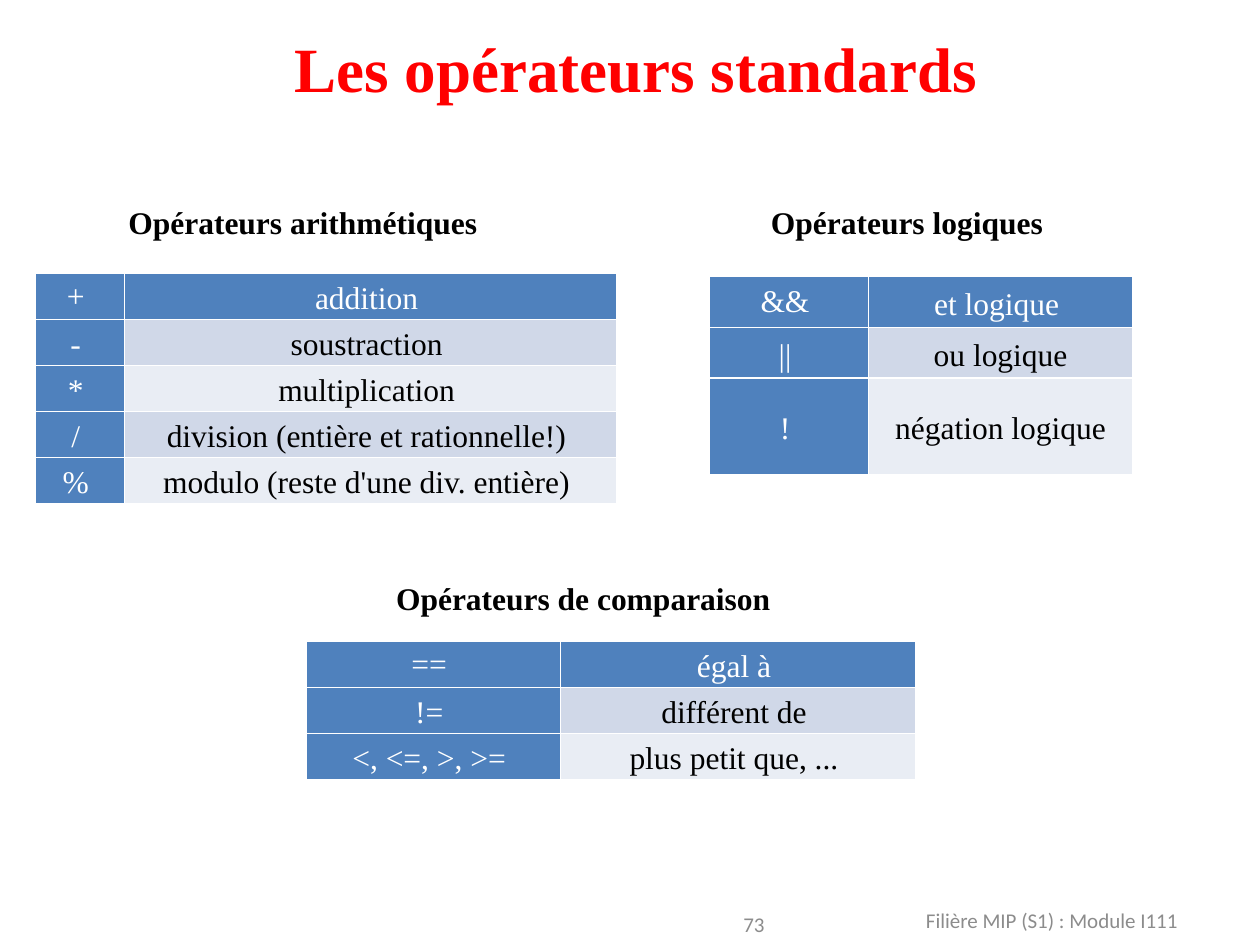
from pptx import Presentation
from pptx.dml.color import RGBColor
from pptx.enum.text import MSO_ANCHOR as Anchor, MSO_AUTO_SIZE as AutoSize, PP_ALIGN as Align
from pptx.util import Pt

RED = RGBColor(0xFF, 0x00, 0x00)
BLACK = RGBColor(0x00, 0x00, 0x00)
WHITE = RGBColor(0xFF, 0xFF, 0xFF)
GREY = RGBColor(0x8C, 0x8C, 0x8C)
BLUE = RGBColor(0x4F, 0x81, 0xBD)
BANDS = (RGBColor(0xE9, 0xED, 0xF4), RGBColor(0xD0, 0xD8, 0xE8))

ARITHMETIC = [
    ("+ ", "addition "),
    ("- ", "soustraction "),
    ("* ", "multiplication "),
    ("/ ", "division (entière et rationnelle!) "),
    ("% ", "modulo (reste d'une div. entière) "),
]
LOGIC = [
    ("&& ", "et logique "),
    ("|| ", "ou logique"),
    ("! ", "négation logique"),
]
COMPARISON = [
    ("== ", "égal à "),
    ("!= ", "différent de "),
    ("<, <=, >, >= ", "plus petit que, ... "),
]


class OperatorSlide:
    serif = "Times New Roman"
    sans = "Calibri"
    cell_margin = 0.72
    line_spacing = 1.15

    def __init__(self, presentation):
        self.slide = presentation.slides.add_slide(presentation.slide_layouts[5])

    def format(self, paragraph, size, color, font, bold=False, align=Align.LEFT):
        paragraph.alignment = align
        for run in paragraph.runs:
            run.font.name = font
            run.font.size = Pt(size)
            run.font.bold = bold
            run.font.color.rgb = color

    def title(self, text, left, top, width, height):
        title = self.slide.shapes.title
        title.left, title.top, title.width, title.height = map(Pt, (left, top, width, height))
        frame = title.text_frame
        frame.text = text
        frame.word_wrap = False
        frame.auto_size = AutoSize.NONE
        frame.vertical_anchor = Anchor.TOP
        self.format(frame.paragraphs[0], 36, RED, self.serif, bold=True)

    def label(self, text, left, top, width, anchor, wrap, **style):
        box = self.slide.shapes.add_textbox(Pt(left), Pt(top), Pt(width), Pt(29))
        frame = box.text_frame
        frame.text = text
        frame.word_wrap = wrap
        frame.vertical_anchor = anchor
        self.format(frame.paragraphs[0], **style)

    def heading(self, text, left, top, width):
        self.label(text, left, top, width, Anchor.TOP, False,
                   size=18, color=BLACK, font=self.serif, bold=True)

    def footer(self, text, left, top, width, align=Align.LEFT):
        self.label(text, left, top, width, Anchor.MIDDLE, True,
                   size=12, color=GREY, font=self.sans, align=align)

    def table(self, rows, left, top, widths, heights):
        """Symbols in the first column and the whole first row get the header colours."""
        table = self.slide.shapes.add_table(
            len(rows), len(widths), Pt(left), Pt(top), Pt(sum(widths)), Pt(sum(heights))).table
        table.first_col = True
        for column, width in zip(table.columns, widths):
            column.width = Pt(width)
        for r, (texts, height) in enumerate(zip(rows, heights)):
            table.rows[r].height = Pt(height)
            for c, text in enumerate(texts):
                is_header = r == 0 or c == 0
                self.cell(table.cell(r, c), text,
                          BLUE if is_header else BANDS[r % 2],
                          WHITE if is_header else BLACK,
                          1.0 if r == c == 0 else self.line_spacing)

    def cell(self, cell, text, fill, color, spacing):
        cell.text_frame.text = text
        cell.vertical_anchor = Anchor.MIDDLE
        cell.margin_left = cell.margin_right = Pt(self.cell_margin)
        cell.margin_top = cell.margin_bottom = Pt(self.cell_margin)
        cell.fill.solid()
        cell.fill.fore_color.rgb = fill
        paragraph = cell.text_frame.paragraphs[0]
        paragraph.line_spacing = spacing
        self.format(paragraph, 18, color, self.serif, align=Align.CENTER)


def main():
    presentation = Presentation()
    presentation.slide_width, presentation.slide_height = Pt(720), Pt(540)
    page = OperatorSlide(presentation)
    row = 26.3

    page.title("Les opérateurs standards", 161.3, 13, 408, 51)

    page.heading("Opérateurs arithmétiques", 66.3, 112.3, 214.5)
    page.table(ARITHMETIC, 20, 156.3, (51, 281.5), [row] * len(ARITHMETIC))

    page.heading("Opérateurs logiques", 433.5, 112.3, 171.5)
    page.table(LOGIC, 405.5, 157.7, (90.7, 151.2), (29.5, 28.8, 55.4))

    page.heading("Opérateurs de comparaison", 219.3, 327.5, 230.5)
    page.table(COMPARISON, 174.8, 366.5, (145.4, 203), [row] * len(COMPARISON))

    page.footer("73", 300, 513.5, 144, Align.RIGHT)
    page.footer("Filière MIP (S1) : Module I111", 522, 511.5, 198)

    presentation.save("out.pptx")


if __name__ == "__main__":
    main()
